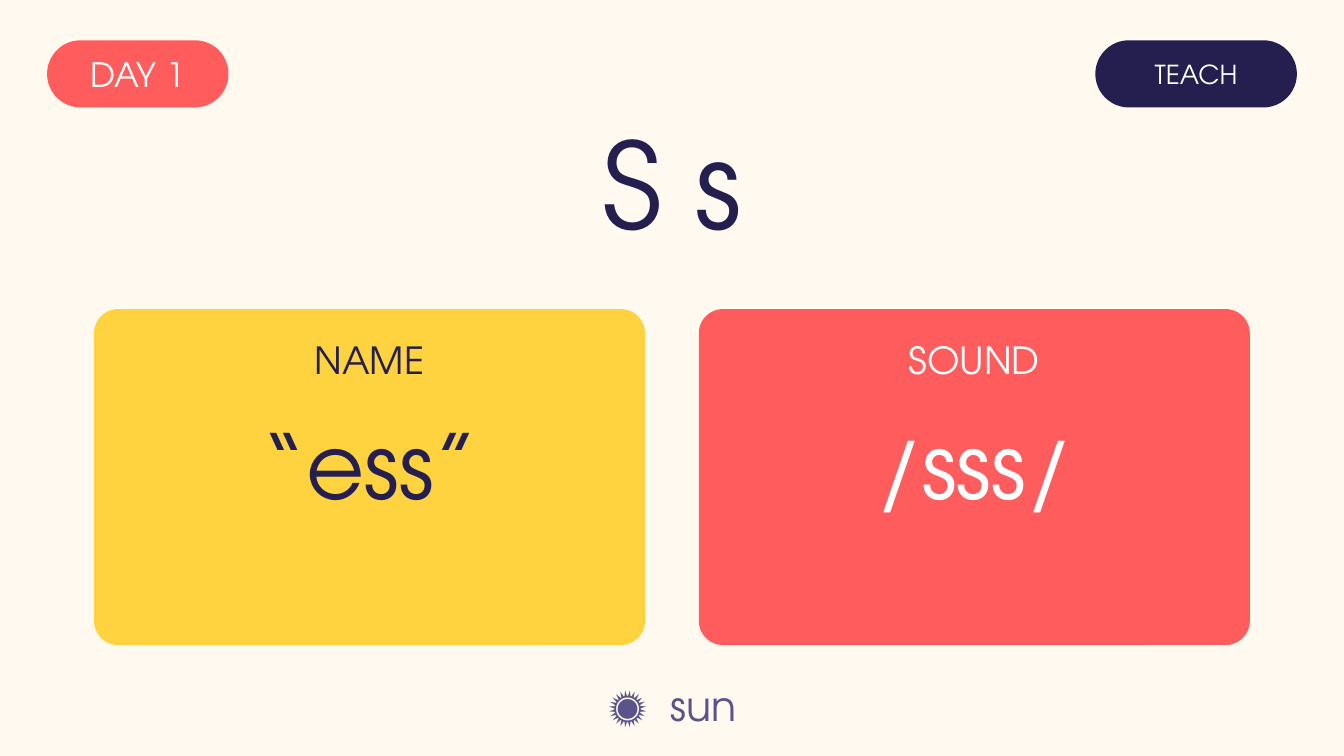
from dataclasses import dataclass

from pptx import Presentation
from pptx.dml.color import RGBColor as Color
from pptx.enum.shapes import MSO_SHAPE as Shape
from pptx.enum.text import MSO_ANCHOR as Anchor, PP_ALIGN as Align
from pptx.util import Inches, Pt


@dataclass(frozen=True)
class Theme:
    """Colours, typeface and type sizes of the lesson."""
    cream: str = "FFF9EF"
    coral: str = "FF5D5D"
    navy: str = "241F4E"
    yellow: str = "FFD23F"
    violet: str = "5A548A"
    white: str = "FFFFFF"
    face: str = "TeX Gyre Adventor"
    letter: int = 64
    answer: int = 48
    keyword: int = 22
    heading: int = 20
    day: int = 18
    stage: int = 14


THEME = Theme()


def apply(target, values):
    """Set each attribute of the target from a dict of values."""
    for name, value in values.items():
        setattr(target, name, value)


def paint(fill, colour):
    """Give a fill one solid colour."""
    fill.solid()
    fill.fore_color.rgb = Color.from_string(colour)


def add_panel(page, area, colour, rounding):
    """Draw a rounded rectangle without outline or shadow."""
    panel = page.shapes.add_shape(Shape.ROUNDED_RECTANGLE, *map(Inches, area))
    panel.adjustments[0] = rounding
    panel.shadow.inherit = False
    panel.line.fill.background()
    paint(panel.fill, colour)


def add_label(page, area, text, size, colour, margins=(0.1, 0.05)):
    """Write one centred line and return its paragraph."""
    box = page.shapes.add_textbox(*map(Inches, area))
    side, edge = map(Inches, margins)
    apply(box.text_frame, {
        "word_wrap": True, "vertical_anchor": Anchor.MIDDLE,
        "margin_left": side, "margin_right": side,
        "margin_top": edge, "margin_bottom": edge,
    })
    para = box.text_frame.paragraphs[0]
    para.alignment = Align.CENTER
    add_span(para, text, size, colour)
    return para


def add_span(para, text, size, colour):
    """Append styled text to a paragraph and return it."""
    span = para.add_run()
    span.text = text
    apply(span.font, {"name": THEME.face, "size": Pt(size)})
    span.font.color.rgb = Color.from_string(colour)
    return span


def add_pill(page, left, width, text, size, colour):
    """Draw a lesson tag at the top of the page."""
    area = (left, 0.3, width, 0.5)
    add_panel(page, area, colour, 0.5)
    add_label(page, area, text, size, THEME.white, margins=(0, 0))


def add_card(page, left, heading, answer, fill, ink):
    """Draw a card with a heading above a large answer."""
    width = 4.1
    add_panel(page, (left, 2.3, width, 2.5), fill, 0.072)
    add_label(page, (left, 2.45, width, 0.45), heading, THEME.heading, ink)
    add_label(page, (left, 3, width, 0.9), answer, THEME.answer, ink)


def add_keyword(page, symbol, word):
    """Write a symbol and its word with a widened space between them."""
    style = (THEME.keyword, THEME.violet)
    para = add_label(page, (0, 5, 10, 0.5), symbol, *style)
    gap = add_span(para, " ", *style)
    gap.font._element.set("spc", "610")
    add_span(para, word, *style)


def main():
    """Build the letter slide and save it."""
    deck = Presentation()
    width = Inches(10)
    apply(deck, {"slide_width": width, "slide_height": width * 9 // 16})
    page = deck.slides.add_slide(deck.slide_layouts[6])
    paint(page.background.fill, THEME.cream)

    add_pill(page, 0.35, 1.35, "DAY 1", THEME.day, THEME.coral)
    add_pill(page, 8.15, 1.5, "TEACH", THEME.stage, THEME.navy)
    add_label(page, (0, 0.85, 10, 1), "S s", THEME.letter, THEME.navy)
    add_card(page, 0.7, "NAME", "“ess”", THEME.yellow, THEME.navy)
    add_card(page, 5.2, "SOUND", "/sss/", THEME.coral, THEME.white)
    add_keyword(page, "☀️", "sun")

    deck.save("out.pptx")


if __name__ == "__main__":
    main()
